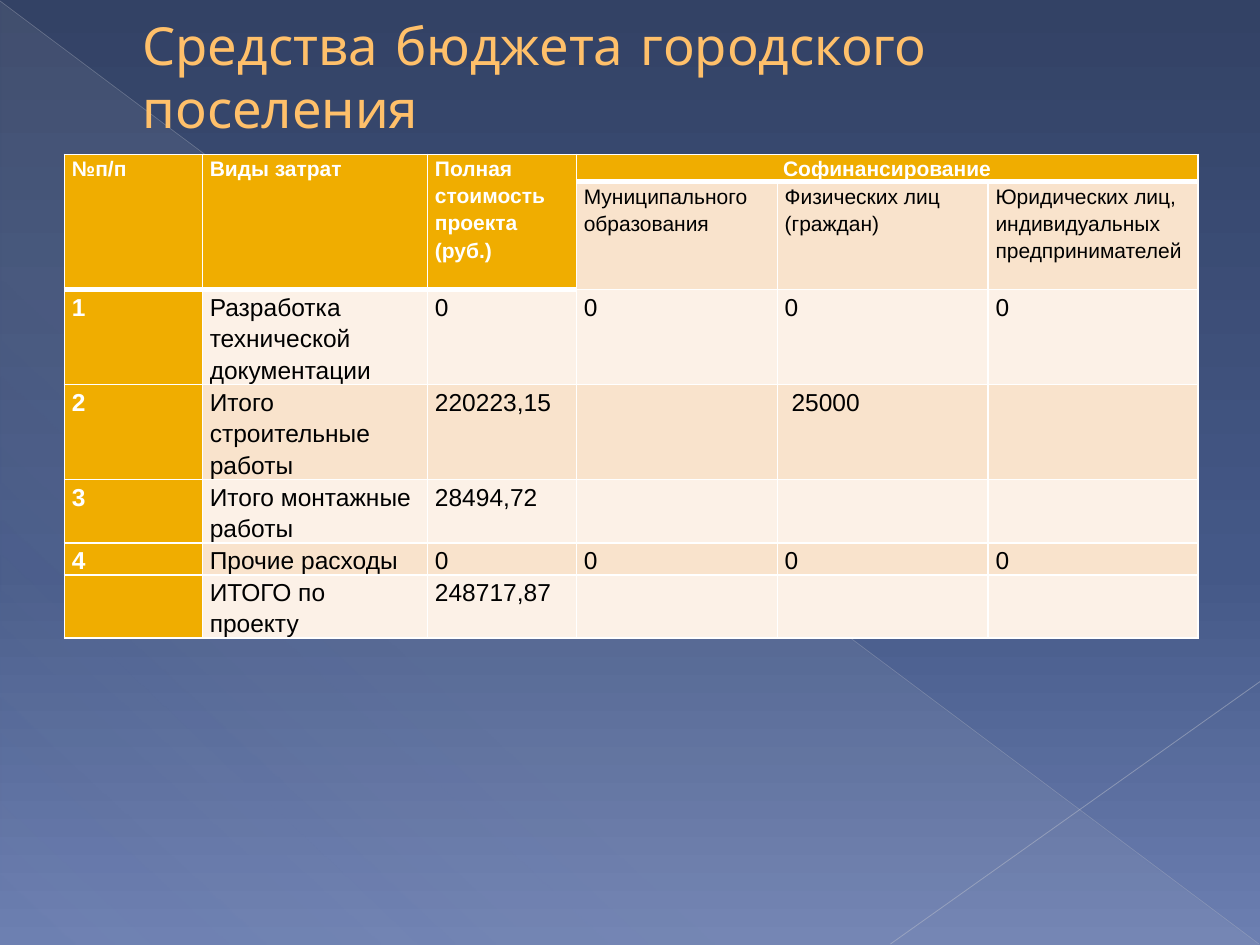
from dataclasses import dataclass

from lxml import etree
from pptx import Presentation
from pptx.dml.color import RGBColor
from pptx.enum import shapes, text
from pptx.oxml.ns import qn
from pptx.util import Cm, Pt

COLORS = {
    "night": "334265", "dusk": "445887", "haze": "6C7FB1",
    "beam": "D4D4D6", "ray": "B9BDC8", "ray_light": "C1C4CE",
    "title": "FFC06A", "title_edge": "A67800",
    "header": "F0AD00", "band_dark": "F9E3CC", "band_light": "FCF1E7",
    "white": "FFFFFF", "black": "000000",
}
FONT_TITLE, FONT_TABLE = "Comic Neue", "Arial"

COL_WIDTHS = [2.78, 4.54, 3.0, 4.05, 4.25, 4.23]
ROW_HEIGHTS = [0.55, 2.18, 1.91, 1.91, 1.27, 0.64, 1.27]
ROWS = [
    ["№п/п", "Виды затрат", "Полная стоимость проекта (руб.)", "Софинансирование", "", ""],
    ["", "", "", "Муниципального образования", "Физических лиц (граждан)",
     "Юридических лиц, индивидуальных предпринимателей"],
    ["1", "Разработка технической документации", "0", "0", "0", "0"],
    ["2", "Итого строительные работы", "220223,15", "", " 25000", ""],
    ["3", "Итого монтажные работы", "28494,72", "", "", ""],
    ["4", "Прочие расходы", "0", "0", "0", "0"],
    ["", "ИТОГО по проекту", "248717,87", "", "", ""],
]
HEADER_ROWS, MERGED_COLS = 2, 3


@dataclass
class Stop:
    pos: int
    color: str
    alpha: int = 100


@dataclass
class Ray:
    x1: float
    y1: float
    x2: float
    y2: float
    color: str
    width: float
    alpha: int


def rgb(name: str) -> RGBColor:
    return RGBColor.from_string(COLORS[name])


def add_color(parent, name: str, alpha: int = 100) -> None:
    clr = etree.SubElement(parent, qn("a:srgbClr"), val=COLORS[name])
    if alpha < 100:
        etree.SubElement(clr, qn("a:alpha"), val=str(alpha * 1000))


def set_gradient(fill, owner, stops: list[Stop], angle: int) -> None:
    fill.gradient()
    grad = owner.find(".//" + qn("a:gradFill"))
    for child in list(grad):
        grad.remove(child)
    stop_list = etree.SubElement(grad, qn("a:gsLst"))
    for stop in stops:
        gs = etree.SubElement(stop_list, qn("a:gs"), pos=str(stop.pos * 1000))
        add_color(gs, stop.color, stop.alpha)
    etree.SubElement(grad, qn("a:lin"), ang=str(angle * 60000), scaled="0")


def draw_ray(s, ray: Ray) -> None:
    line = s.shapes.add_connector(shapes.MSO_CONNECTOR.STRAIGHT, Cm(ray.x1), Cm(ray.y1),
                                  Cm(ray.x2), Cm(ray.y2))
    line.line.width = Pt(ray.width)
    line.line.color.rgb = rgb(ray.color)
    clr = line.element.spPr.find(".//" + qn("a:srgbClr"))
    etree.SubElement(clr, qn("a:alpha"), val=str(ray.alpha * 1000))
    etree.SubElement(line.element.spPr, qn("a:effectLst"))


def draw_backdrop(s) -> None:
    set_gradient(s.background.fill, s.element,
                 [Stop(0, "night"), Stop(60, "dusk"), Stop(100, "haze")], 90)
    sp = s.shapes.add_shape(shapes.MSO_SHAPE.RIGHT_TRIANGLE, Cm(0.02), Cm(0.04),
                            Cm(25.36), Cm(19))
    sp.shadow.inherit = False
    sp.line.fill.background()
    set_gradient(sp.fill, sp.element,
                 [Stop(0, "beam", 10), Stop(70, "beam", 8), Stop(100, "beam", 1)], 133)
    draw_ray(s, Ray(0, 0.02, 25.38, 19.03, "ray", 0.39, 35))
    draw_ray(s, Ray(25.4, 13.74, 17.95, 19.03, "ray_light", 0.47, 45))


def draw_title(s, caption: str) -> None:
    title = s.shapes.title
    title.element.getparent().append(title.element)  # in front of the backdrop
    title.left, title.top, title.width, title.height = Cm(1.27), Cm(0.74), Cm(22.86), Cm(1.57)
    tf = title.text_frame
    tf.word_wrap = True
    tf.auto_size = text.MSO_AUTO_SIZE.NONE
    tf.vertical_anchor = text.MSO_ANCHOR.MIDDLE
    p = tf.paragraphs[0]
    p.alignment = text.PP_ALIGN.LEFT
    p._p.get_or_add_pPr().set("marL", str(Cm(1.35)))
    r = p.add_run()
    r.text = caption
    r.font.name, r.font.size = FONT_TITLE, Pt(30)
    r.font.color.rgb = rgb("title")
    edge = etree.Element(qn("a:ln"), w=str(Pt(0.5)))
    add_color(etree.SubElement(edge, qn("a:solidFill")), "title_edge")
    r.font._element.insert(0, edge)


def rule_below(row: int, col: int) -> int:
    """Width of the rule under a cell: thick below the heading cells."""
    return 3 if row == 0 or (row == 1 and col < MERGED_COLS) else 1


def set_borders(cell, row: int, col: int) -> None:
    top = rule_below(row - 1, col) if row else 1
    tc_pr = cell._tc.get_or_add_tcPr()
    for side, width in zip("LRTB", (1, 1, top, rule_below(row, col))):
        ln = etree.SubElement(tc_pr, qn(f"a:ln{side}"), w=str(Pt(width)))
        add_color(etree.SubElement(ln, qn("a:solidFill")), "white")


def format_cell(cell, row: int, col: int, content: str) -> None:
    heading = row == 0 or col == 0 or (row == 1 and col < MERGED_COLS)
    set_borders(cell, row, col)
    cell.fill.solid()
    band = "band_dark" if row % 2 else "band_light"
    cell.fill.fore_color.rgb = rgb("header" if heading else band)
    cell.margin_left = cell.margin_right = Cm(0.15)
    cell.margin_top = cell.margin_bottom = 0
    p = cell.text_frame.paragraphs[0]
    p.line_spacing = 1.15
    p.font.name = FONT_TABLE
    p.font.size = Pt(12 if row < HEADER_ROWS else 14)
    p.font.bold = heading
    p.font.color.rgb = rgb("white" if heading else "black")
    if content:
        p.add_run().text = content


def draw_table(s) -> None:
    table = s.shapes.add_table(len(ROWS), len(COL_WIDTHS), Cm(1.3), Cm(3.11),
                               Cm(sum(COL_WIDTHS)), Cm(sum(ROW_HEIGHTS))).table
    for column, width in zip(table.columns, COL_WIDTHS):
        column.width = Cm(width)
    for table_row, height in zip(table.rows, ROW_HEIGHTS):
        table_row.height = Cm(height)
    for row, values in enumerate(ROWS):
        for col, content in enumerate(values):
            format_cell(table.cell(row, col), row, col, content)
    # Two-row headings and the shared co-financing heading
    for col in range(MERGED_COLS):
        table.cell(0, col).merge(table.cell(1, col))
    shared = table.cell(0, MERGED_COLS)
    shared.merge(table.cell(0, len(COL_WIDTHS) - 1))
    shared.text_frame.paragraphs[0].alignment = text.PP_ALIGN.CENTER


def main() -> None:
    prs = Presentation()
    prs.slide_width, prs.slide_height = Cm(25.4), Cm(19.05)
    s = prs.slides.add_slide(prs.slide_layouts[5])
    draw_backdrop(s)
    draw_title(s, "Средства бюджета городского поселения")
    draw_table(s)
    prs.save("out.pptx")


if __name__ == "__main__":
    main()
